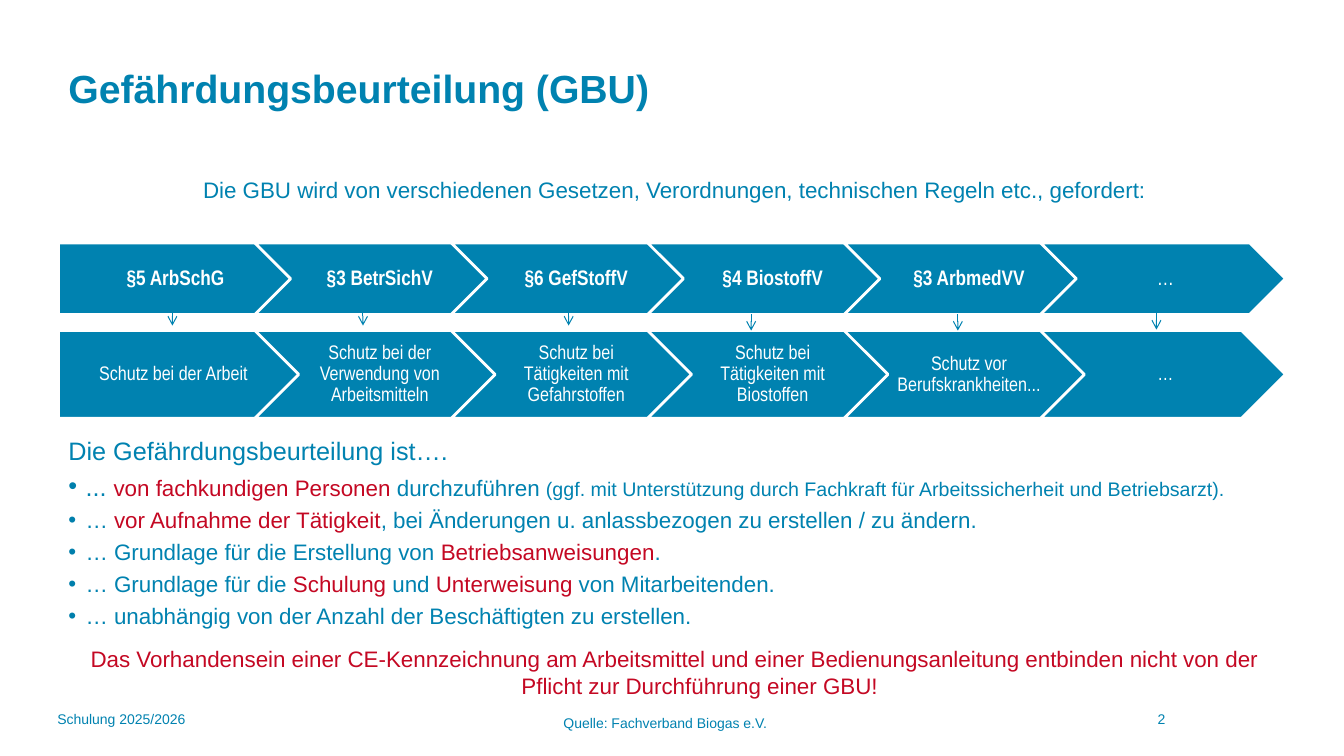
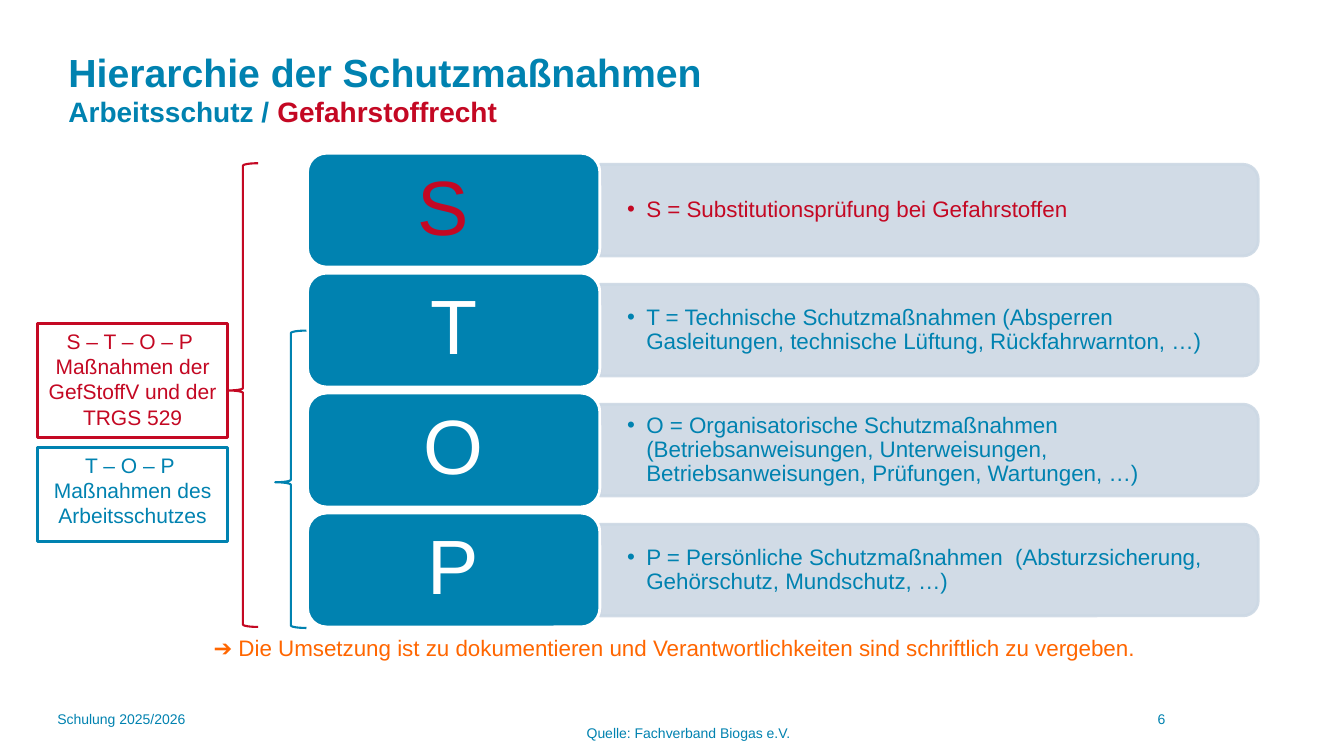
from dataclasses import dataclass
from typing import Any, Optional, Sequence

import lxml.etree
import pptx
import pptx.dml.color
import pptx.enum.shapes
import pptx.enum.text
import pptx.oxml.ns
import pptx.util

Inches = pptx.util.Inches
Pt = pptx.util.Pt
qn = pptx.oxml.ns.qn
Kind = pptx.enum.shapes.MSO_SHAPE
Align = pptx.enum.text.PP_ALIGN
Anchor = pptx.enum.text.MSO_ANCHOR


@dataclass(frozen=True)
class Theme:
    blue: str = "0082B0"
    red: str = "C40823"
    orange: str = "FF6600"
    pale: str = "CCD8E4"
    white: str = "FFFFFF"
    dot: str = "007FAC"
    font: str = "Arial"
    narrow: str = "Arial Narrow"
    title: float = 28
    sub: float = 20
    lead: float = 18
    body: float = 16
    label: float = 15
    small: float = 14
    foot: float = 10
    letter: float = 55


THEME = Theme()


@dataclass(frozen=True)
class Run:
    text: str
    color: str = THEME.blue
    size: float = THEME.body
    bold: bool = False
    font: str = THEME.font


@dataclass(frozen=True)
class Para:
    runs: Sequence[Run]
    center: bool = False
    before: float = 0
    spacing: Optional[float] = None
    left: float = 0
    hang: float = 0
    dot: Optional[str] = None


@dataclass(frozen=True)
class Box:
    left: float
    top: float
    width: float
    height: float

    def emu(self) -> tuple:
        return tuple(map(Inches, (self.left, self.top, self.width, self.height)))


@dataclass(frozen=True)
class Row:
    top: float
    height: float
    size: float
    bold: bool
    texts: Sequence[str]


@dataclass(frozen=True)
class Step:
    letter: str
    text: str
    ink: str = THEME.white
    color: str = THEME.blue


@dataclass(frozen=True)
class Scope:
    """A framed label and the brace beside it."""
    box: Box
    brace: Box
    middle: float
    color: str
    lines: Sequence[str]


def rgb(color: str) -> pptx.dml.color.RGBColor:
    return pptx.dml.color.RGBColor.from_string(color)


def write(shape: Any, paras: Sequence[Para], anchor: Any = Anchor.TOP,
          inset: Sequence[float] = (0.1, 0.05, 0.1, 0.05)) -> None:
    """Fill a shape with text; insets run left, top, right, bottom."""
    frame = shape.text_frame
    frame.word_wrap = True
    frame.vertical_anchor = anchor
    (frame.margin_left, frame.margin_top,
     frame.margin_right, frame.margin_bottom) = map(Inches, inset)
    for i, item in enumerate(paras):
        para = frame.add_paragraph() if i else frame.paragraphs[0]
        props = para._p.get_or_add_pPr()
        if item.hang:
            props.set("marL", str(Inches(item.left)))
            props.set("indent", str(-Inches(item.hang)))
        if item.dot:
            tint = lxml.etree.SubElement(props, qn("a:buClr"))
            lxml.etree.SubElement(tint, qn("a:srgbClr"), val=item.dot)
            lxml.etree.SubElement(props, qn("a:buFont"), typeface=THEME.font)
            lxml.etree.SubElement(props, qn("a:buChar"), char="•")
        para.alignment = Align.CENTER if item.center else Align.LEFT
        para.space_before = Pt(item.before)
        if item.spacing:
            para.line_spacing = item.spacing
        for part in item.runs:
            if part.text == "\n":
                para.add_line_break()
                continue
            run = para.add_run()
            run.text = part.text
            run.font.name = part.font
            run.font.size = Pt(part.size)
            run.font.bold = part.bold
            run.font.color.rgb = rgb(part.color)


def text(slide: Any, box: Box, paras: Sequence[Para], **style: Any) -> None:
    write(slide.shapes.add_textbox(*box.emu()), paras, **style)


def draw(slide: Any, kind: Any, box: Box, fill: Optional[str],
         line: str, width: float) -> Any:
    shape = slide.shapes.add_shape(kind, *box.emu())
    shape.shadow.inherit = False
    if fill:
        shape.fill.solid()
        shape.fill.fore_color.rgb = rgb(fill)
    else:
        shape.fill.background()
    shape.line.color.rgb = rgb(line)
    shape.line.width = Pt(width)
    return shape


def fade(shape: Any, percent: int) -> None:
    """Set the opacity of fill and line."""
    for tint in shape._element.spPr.iter(qn("a:srgbClr")):
        lxml.etree.SubElement(tint, qn("a:alpha"), val=str(percent * 1000))


def arrow(slide: Any, left: float, top: float, drop: float) -> None:
    line = slide.shapes.add_connector(
        pptx.enum.shapes.MSO_CONNECTOR.STRAIGHT,
        Inches(left), Inches(top), Inches(left), Inches(top + drop))
    line.line.color.rgb = rgb(THEME.blue)
    line.line.width = Pt(0.75)
    lxml.etree.SubElement(line.line._get_or_add_ln(), qn("a:tailEnd"), type="arrow")
    lxml.etree.SubElement(line._element.spPr, qn("a:effectLst"))


def start(deck: Any, title: Sequence[Run], page: str, source: Box) -> Any:
    """Add a slide with its title and footers."""
    slide = deck.slides.add_slide(deck.slide_layouts[6])
    text(slide, Box(0.58, 0.25, 8.61, 1.25), [Para(title)], anchor=Anchor.MIDDLE)
    feet = (
        (Box(0.47, 7, 3.25, 0.5), "Schulung 2025/2026", False),
        (Box(10.13, 7, 2.78, 0.5), page, True),
        (source, "Quelle: Fachverband Biogas e.V.", False),
    )
    for box, words, center in feet:
        text(slide, box, [Para([Run(words, size=THEME.foot)], center)])
    return slide


def bullet(*runs: Run) -> Para:
    return Para(runs, before=3.7, left=0.17, hang=0.17, dot=THEME.dot)


def red(words: str) -> Run:
    return Run(words, THEME.red)


ROWS = (
    Row(2.41, 0.71, THEME.label, True,
        ("§5 ArbSchG", "§3 BetrSichV", "§6 GefStoffV", "§4 BiostoffV",
         "§3 ArbmedVV", "…")),
    Row(3.28, 0.87, THEME.small, False,
        ("Schutz bei der Arbeit", "Schutz bei der Verwendung von Arbeitsmitteln",
         "Schutz bei Tätigkeiten mit Gefahrstoffen",
         "Schutz bei Tätigkeiten mit Biostoffen",
         "Schutz vor Berufskrankheiten...", "…")),
)
ARROWS = ((1.71, 3.07), (3.6, 3.07), (5.64, 3.07),
          (7.45, 3.12), (9.5, 3.12), (11.47, 3.11))
POINTS = (
    Para([Run("Die Gefährdungsbeurteilung ist….", size=THEME.lead)]),
    bullet(Run("... ", size=THEME.lead), red("von fachkundigen Personen "),
           Run("durchzuführen "),
           Run("(ggf. mit Unterstützung durch Fachkraft für Arbeitssicherheit "
               "und Betriebsarzt).", size=THEME.small)),
    bullet(Run("… "), red("vor Aufnahme der Tätigkeit"),
           Run(", bei Änderungen u. anlassbezogen zu erstellen / zu ändern.")),
    bullet(Run("… Grundlage für die Erstellung von "),
           red("Betriebsanweisungen"), Run(".")),
    bullet(Run("… Grundlage für die "), red("Schulung"), Run(" und "),
           red("Unterweisung"), Run(" von Mitarbeitenden.")),
    bullet(Run("… unabhängig von der Anzahl der Beschäftigten zu erstellen.")),
    Para([red("Das Vorhandensein einer CE-Kennzeichnung am Arbeitsmittel und einer "
              "Bedienungsanleitung entbinden nicht von der Pflicht zur "
              "Durchführung einer GBU!")],
         center=True, before=11.6, left=0.5, hang=0.5),
)
STEPS = (
    Step("S ", "S = Substitutionsprüfung bei Gefahrstoffen", THEME.red, THEME.red),
    Step("T", "T = Technische Schutzmaßnahmen (Absperren Gasleitungen, "
              "technische Lüftung, Rückfahrwarnton, …)"),
    Step("O", "O = Organisatorische Schutzmaßnahmen (Betriebsanweisungen, "
              "Unterweisungen, Betriebsanweisungen, Prüfungen, Wartungen, …)"),
    Step("P", "P = Persönliche Schutzmaßnahmen  (Absturzsicherung, "
              "Gehörschutz, Mundschutz, …)"),
)
SCOPES = (
    Scope(Box(0.37, 4.44, 1.89, 0.93), Box(2.73, 3.28, 0.31, 2.95), 0.51, THEME.blue,
          ("T – O – P ", "Maßnahmen des Arbeitsschutzes")),
    Scope(Box(0.37, 3.21, 1.89, 1.13), Box(2.26, 1.62, 0.3, 4.6), 0.49, THEME.red,
          ("S – T – O – P ", "Maßnahmen der GefStoffV und der TRGS 529")),
)


def duty(deck: Any) -> None:
    title = [Run("Gefährdungsbeurteilung (GBU)", size=THEME.title, bold=True)]
    slide = start(deck, title, "2", Box(5.49, 7.04, 2.5, 0.44))
    text(slide, Box(0.58, 1.7, 12.22, 0.4), [Para([Run(
        "Die GBU wird von verschiedenen Gesetzen, Verordnungen, technischen "
        "Regeln etc., gefordert:")], center=True)])
    text(slide, Box(0.58, 4.27, 12.22, 2.75), POINTS)
    for row in ROWS:
        for i, words in enumerate(row.texts):
            kind = Kind.CHEVRON if i else Kind.PENTAGON
            box = Box(0.58 + i * 1.948, row.top, 2.43, row.height)
            shape = draw(slide, kind, box, THEME.blue, THEME.white, 2)
            run = Run(words, THEME.white, row.size,
                      row.bold and words != "…", THEME.narrow)
            write(shape, [Para([run], center=True, spacing=0.9)], Anchor.MIDDLE,
                  (0.07 if i else 0.09, 0.04, 0.02, 0.04))
    for left, top in ARROWS:
        arrow(slide, left, top, 0.16)


def ranks(deck: Any) -> None:
    """Build the slide on the order of protective measures."""
    title = [Run("Hierarchie der Schutzmaßnahmen", size=THEME.title, bold=True),
             Run("\n"),
             Run("Arbeitsschutz / ", size=THEME.sub, bold=True),
             Run("Gefahrstoffrecht", THEME.red, THEME.sub, True)]
    slide = start(deck, title, "6", Box(5.72, 7.14, 2.25, 0.27))
    for i, step in enumerate(STEPS):
        top = 1.52 + i * 1.19
        mid = top + 0.565
        thick, length = 0.91, 6.53
        bar = draw(slide, Kind.ROUND_2_SAME_RECTANGLE,
                   Box(5.95 + (length - thick) / 2, mid - length / 2, thick, length),
                   THEME.pale, THEME.pale, 2)
        bar.rotation = 90
        fade(bar, 90)
        text(slide, Box(5.95, mid - 0.41, 6.49, 0.82),
             [Para([Run(step.text, step.color)], spacing=0.9, left=0.19, hang=0.19,
                   dot=step.color)],
             anchor=Anchor.MIDDLE, inset=(0.27, 0.14, 0.27, 0.14))
        tile = draw(slide, Kind.ROUNDED_RECTANGLE, Box(3.05, top, 2.9, 1.13),
                    THEME.blue, THEME.white, 2)
        write(tile, [Para([Run(step.letter, step.ink, THEME.letter)],
                          center=True, spacing=0.9)],
              Anchor.MIDDLE, (0.23, 0.11, 0.23, 0.11))
    for scope in SCOPES:
        label = draw(slide, Kind.RECTANGLE, scope.box, None, scope.color, 2.25)
        write(label, [Para([Run(words, scope.color, THEME.label)], center=True)
                      for words in scope.lines])
        brace = draw(slide, Kind.LEFT_BRACE, scope.brace, None, scope.color, 1.5)
        brace.adjustments[0] = 0.08
        brace.adjustments[1] = scope.middle
    text(slide, Box(0.58, 6.24, 12.22, 0.4), [Para([Run(
        "➔ Die Umsetzung ist zu dokumentieren und Verantwortlichkeiten sind "
        "schriftlich zu vergeben.", THEME.orange)], center=True)])


def main() -> None:
    deck = pptx.Presentation()
    deck.slide_width = Inches(13.33)
    deck.slide_height = Inches(7.5)
    duty(deck)
    ranks(deck)
    deck.save("out.pptx")


if __name__ == "__main__":
    main()
